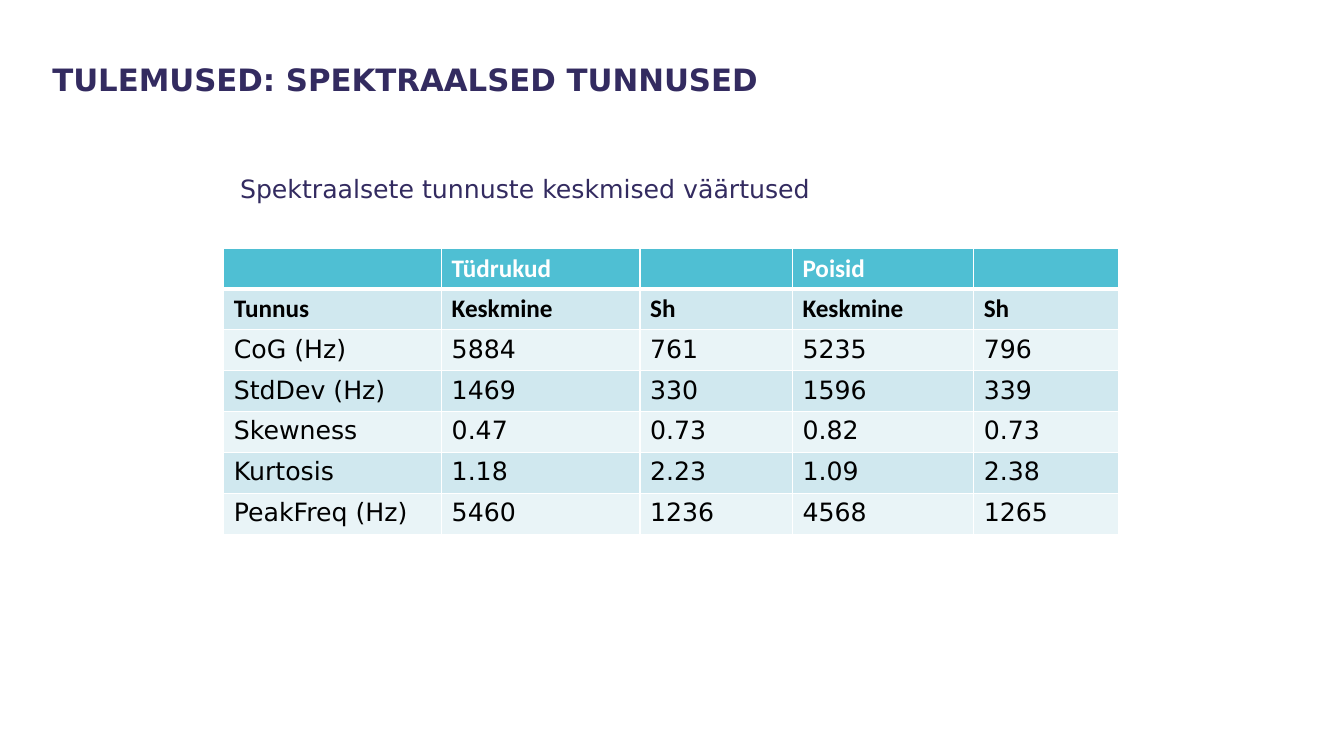
from pptx import Presentation
from pptx.dml.color import RGBColor as Rgb
from pptx.oxml import parse_xml
from pptx.oxml.ns import nsdecls
from pptx.util import Cm, Pt

# Content
TITLE = "TULEMUSED: SPEKTRAALSED TUNNUSED"
LEAD = "Spektraalsete tunnuste keskmised väärtused"
ROWS = [
    ("", "Tüdrukud", "", "Poisid", ""),
    ("Tunnus", "Keskmine", "Sh", "Keskmine", "Sh"),
    ("CoG (Hz)", "5884", "761", "5235", "796"),
    ("StdDev (Hz)", "1469", "330", "1596", "339"),
    ("Skewness", "0.47", "0.73", "0.82", "0.73"),
    ("Kurtosis", "1.18", "2.23", "1.09", "2.38"),
    ("PeakFreq (Hz)", "5460", "1236", "4568", "1265"),
]


# Theme
class Theme:
    ink, black, white = "332B60", "000000", "FFFFFF"
    head, bands = "4FBFD3", ("E9F4F7", "D0E8EF")
    sans, label = "DejaVu Sans", "Calibri"
    big, base = 22, 18
    thin, thick = 1, 3


# Places in cm
TITLE_BOX = (1.32, 1.52, 29.16, 2.26)
LEAD_BOX = (6.05, 4.37, 24.46, 10.95)
LEFT, TOP, HIGH = 5.64, 6.25, 1.03
WIDTHS = (5.49, 5.0, 3.84, 4.57, 3.66)


def write(frame, text, color, **form):
    run = frame.paragraphs[0].add_run()
    run.text = text
    for key, val in form.items():
        setattr(run.font, key, val)
    run.font.color.rgb = Rgb.from_string(color)


def add_text(slide, box, text, **form):
    frame = slide.shapes.add_textbox(*map(Cm, box)).text_frame
    margins = dict.fromkeys(
        ("margin_left", "margin_top", "margin_right", "margin_bottom"), 0)
    for key, val in {"word_wrap": True, **margins}.items():
        setattr(frame, key, val)
    write(frame, text, Theme.ink, name=Theme.sans, **form)


def edge(cell, side, size):
    cell._tc.get_or_add_tcPr().append(parse_xml(
        f'<a:ln{side} {nsdecls("a")} w="{Pt(size)}"><a:solidFill>'
        f'<a:srgbClr val="{Theme.white}"/></a:solidFill></a:ln{side}>'))


def style(cell, row):
    # The thick rule lies between the header and the first band
    heavy = {(0, "B"), (1, "T")}
    for side in "LRTB":
        edge(cell, side, Theme.thick if (row, side) in heavy else Theme.thin)
    cell.fill.solid()
    color = Theme.bands[row % 2] if row else Theme.head
    cell.fill.fore_color.rgb = Rgb.from_string(color)


def add_grid(slide):
    grid = slide.shapes.add_table(
        len(ROWS), len(WIDTHS), Cm(LEFT), Cm(TOP),
        Cm(sum(WIDTHS)), Cm(HIGH * len(ROWS))).table
    for col, width in zip(grid.columns, WIDTHS):
        col.width = Cm(width)
    for r, row in enumerate(ROWS):
        grid.rows[r].height = Cm(HIGH)
        bold = r < 2
        form = {"name": Theme.label if bold else Theme.sans,
                "size": Pt(Theme.base), "bold": bold}
        for c, text in enumerate(row):
            cell = grid.cell(r, c)
            style(cell, r)
            if text:
                write(cell.text_frame, text,
                      Theme.black if r else Theme.white, **form)


def main():
    deck = Presentation()
    deck.slide_width, deck.slide_height = Cm(33.87), Cm(19.05)
    slide = deck.slides.add_slide(deck.slide_layouts[6])
    # Heading and lead line
    add_text(slide, TITLE_BOX, TITLE, size=Pt(Theme.big), bold=True)
    add_text(slide, LEAD_BOX, LEAD, size=Pt(Theme.base))
    # Table of values
    add_grid(slide)
    deck.save("out.pptx")


if __name__ == "__main__":
    main()
